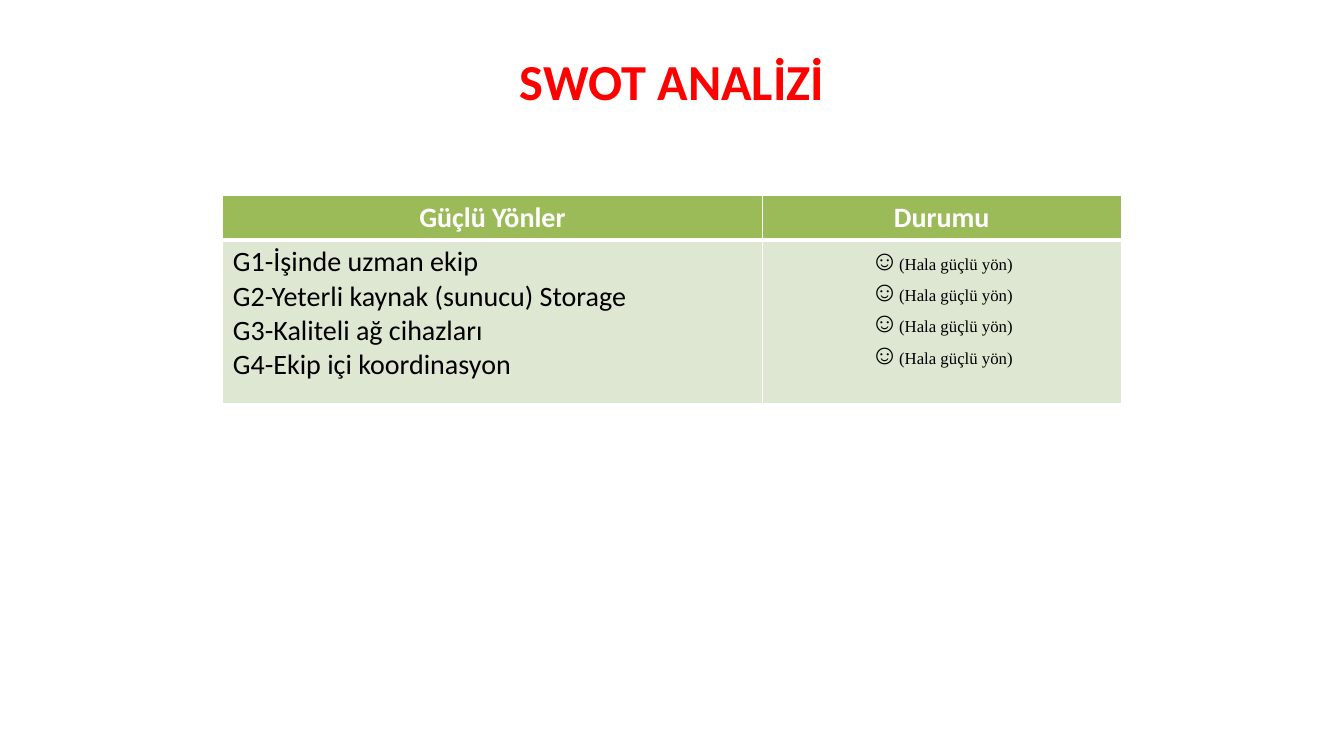
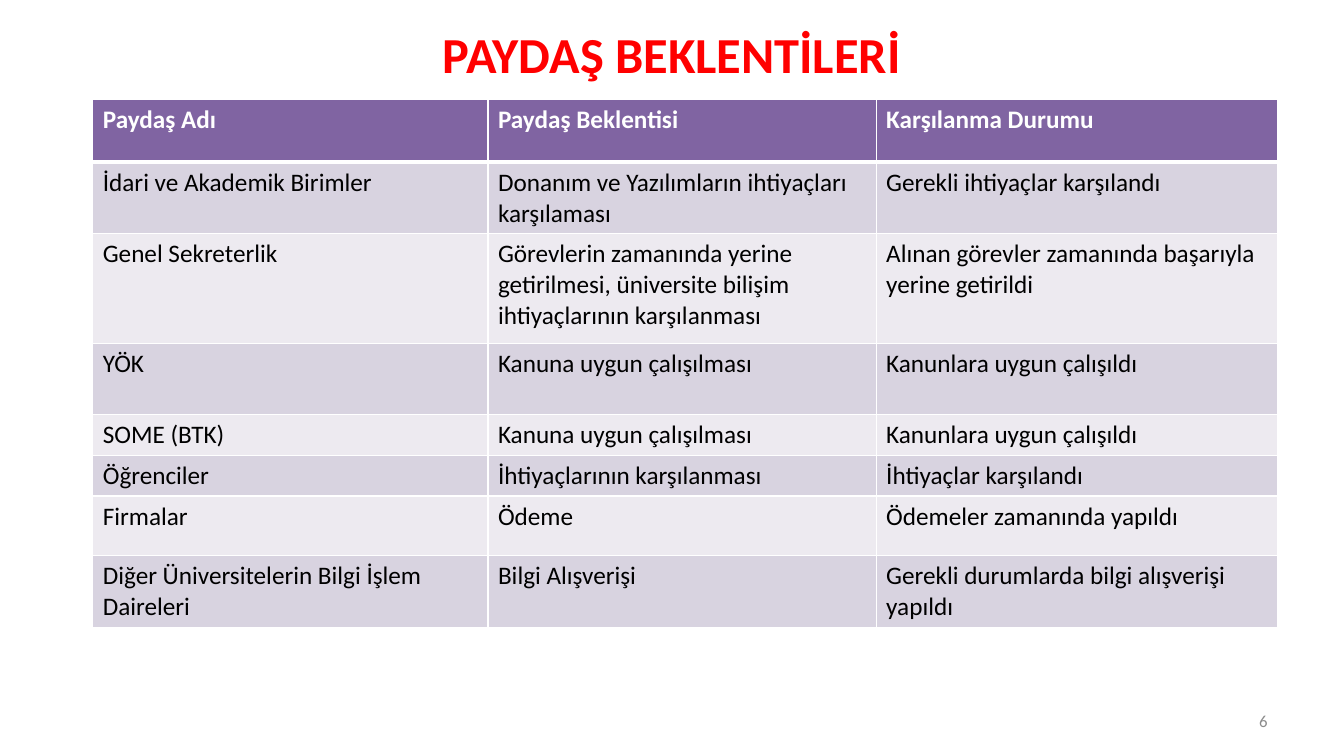
from lxml import etree
from pptx import Presentation, util as u
from pptx.dml.color import RGBColor
from pptx.enum import text
from pptx.oxml import ns

RED = RGBColor(0xFF, 0x00, 0x00)
WHITE = RGBColor(0xFF, 0xFF, 0xFF)
BLACK = RGBColor(0x00, 0x00, 0x00)
GRAY = RGBColor(0x8C, 0x8C, 0x8C)
GREEN = RGBColor(0x9B, 0xBB, 0x59)
SAGE = RGBColor(0xDE, 0xE7, 0xD1)
PURPLE = RGBColor(0x80, 0x64, 0xA2)
LILAC = RGBColor(0xD8, 0xD3, 0xE0)
MIST = RGBColor(0xED, 0xEA, 0xF0)

WIDE, HIGH = 13.33, 7.5
LEFT, MID, RIGHT = text.PP_ALIGN.LEFT, text.PP_ALIGN.CENTER, text.PP_ALIGN.RIGHT
TITLE = dict(name="Calibri", size=u.Pt(36), bold=True, color=RED)
PAGE = dict(name="Calibri", size=u.Pt(12), bold=False, color=GRAY)
SMILE = dict(name="Arial", size=u.Pt(20), bold=False, color=BLACK)
NOTE = dict(name="Times New Roman", size=u.Pt(12), bold=False, color=BLACK)

STATE = [("☺", SMILE), ("(Hala güçlü yön)", NOTE)]
SWOT = [
    ["Güçlü Yönler", "Durumu"],
    [["G1-İşinde uzman ekip", "G2-Yeterli kaynak (sunucu) Storage",
      "G3-Kaliteli ağ cihazları", "G4-Ekip içi koordinasyon"], [STATE] * 4],
]
HOPES = [
    ["Paydaş Adı", "Paydaş Beklentisi", "Karşılanma Durumu"],
    ["İdari ve Akademik Birimler", "Donanım ve Yazılımların ihtiyaçları karşılaması",
     "Gerekli ihtiyaçlar karşılandı"],
    ["Genel Sekreterlik",
     "Görevlerin zamanında yerine getirilmesi, üniversite bilişim ihtiyaçlarının karşılanması",
     "Alınan görevler zamanında başarıyla yerine getirildi"],
    ["YÖK", "Kanuna uygun çalışılması", "Kanunlara uygun çalışıldı"],
    ["SOME (BTK)", "Kanuna uygun çalışılması", "Kanunlara uygun çalışıldı"],
    ["Öğrenciler", "İhtiyaçlarının karşılanması", "İhtiyaçlar karşılandı"],
    ["Firmalar", "Ödeme", "Ödemeler zamanında yapıldı"],
    ["Diğer Üniversitelerin Bilgi İşlem Daireleri", "Bilgi Alışverişi",
     "Gerekli durumlarda bilgi alışverişi yapıldı"],
]


def style(font, look):
    """Apply a dict of format values to a font."""
    for key, val in look.items():
        if key == "color":
            font.color.rgb = val
        else:
            setattr(font, key, val)


def write(frame, lines, look, align):
    """Write lines, each a string or a list of (words, look) pairs."""
    for i, line in enumerate(lines):
        para = frame.paragraphs[0] if i == 0 else frame.add_paragraph()
        para.alignment = align
        for words, form in [(line, look)] if isinstance(line, str) else line:
            run = para.add_run()
            run.text = words
            style(run.font, form)


def place(shape, box):
    """Set a shape's left, top, width and height in inches."""
    for key, val in zip(("left", "top", "width", "height"), box):
        setattr(shape, key, u.Inches(val))


def edge(cell, top, base):
    """Draw white borders with the given top and bottom widths in points."""
    props = cell._tc.get_or_add_tcPr()
    for side, width in zip("LRTB", (1, 1, top, base)):
        line = etree.SubElement(props, ns.qn(f"a:ln{side}"), w=str(u.Pt(width)))
        fill = etree.SubElement(line, ns.qn("a:solidFill"))
        etree.SubElement(fill, ns.qn("a:srgbClr"), val=str(WHITE))


def head(slide, words, top):
    """Put the red centred title at the given height."""
    title = slide.shapes.title
    place(title, ((WIDE - 7.64) / 2, top, 7.64, 0.71))
    frame = title.text_frame
    frame.auto_size = text.MSO_AUTO_SIZE.NONE
    frame.vertical_anchor = text.MSO_ANCHOR.MIDDLE
    write(frame, [words], TITLE, MID)


def grid(slide, spot, cols, rows, data, fills, size, align):
    """Build a table with a bold header row and banded body rows."""
    box = [u.Inches(n) for n in (*spot, sum(cols), sum(rows))]
    table = slide.shapes.add_table(len(rows), len(cols), *box).table
    for col, width in zip(table.columns, cols):
        col.width = u.Inches(width)
    for r, (row, high) in enumerate(zip(data, rows)):
        table.rows[r].height = u.Inches(high)
        first = r == 0
        look = dict(name="Calibri", size=u.Pt(size), bold=first,
                    color=WHITE if first else BLACK)
        for c, item in enumerate(row):
            cell = table.cell(r, c)
            edge(cell, 3 if r == 1 else 1, 3 if first else 1)
            cell.fill.solid()
            cell.fill.fore_color.rgb = fills[0] if first else fills[1 + (r - 1) % 2]
            lines = [item] if isinstance(item, str) else item
            write(cell.text_frame, lines, look, align[first][c])


def foot(slide, page):
    """Put the page number at the lower right."""
    box = slide.shapes.add_textbox(*[u.Inches(n) for n in (9.56, 6.95, 3.11, 0.4)])
    box.text_frame.word_wrap = True
    box.text_frame.vertical_anchor = text.MSO_ANCHOR.MIDDLE
    write(box.text_frame, [page], PAGE, RIGHT)


def main():
    """Build both slides and save the deck."""
    deck = Presentation()
    deck.slide_width, deck.slide_height = u.Inches(WIDE), u.Inches(HIGH)
    plain = deck.slide_layouts[5]

    swot = deck.slides.add_slide(plain)
    head(swot, "SWOT ANALİZİ", 0.44)
    grid(swot, (2.21, 1.94), (5.35, 3.56), (0.43, 1.62), SWOT,
         (GREEN, SAGE, SAGE), 20, ((LEFT, MID), (MID, MID)))

    hopes = deck.slides.add_slide(plain)
    head(hopes, "PAYDAŞ BEKLENTİLERİ", 0.17)
    grid(hopes, (0.92, 0.99), (3.92, 3.85, 3.98),
         (0.62, 0.7, 1.09, 0.7, 0.4, 0.4, 0.59, 0.7), HOPES,
         (PURPLE, LILAC, MIST), 18, ((LEFT,) * 3,) * 2)
    foot(hopes, "6")
    deck.save("out.pptx")


if __name__ == "__main__":
    main()
